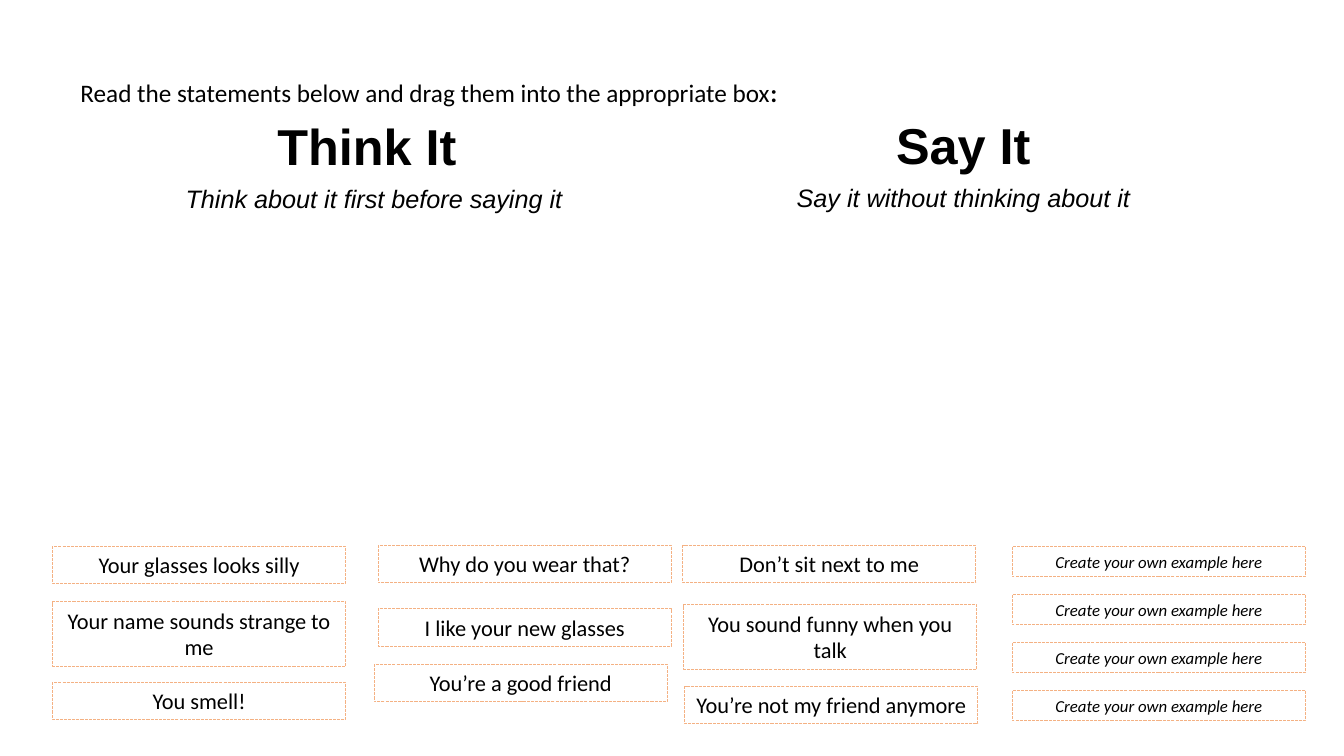
"""Build the Think It / Say It sorting slide."""
from dataclasses import dataclass

from pptx import Presentation
from pptx.dml.color import RGBColor
from pptx.enum.dml import MSO_LINE
from pptx.enum.shapes import MSO_SHAPE
from pptx.enum.text import MSO_ANCHOR, MSO_AUTO_SIZE, PP_ALIGN
from pptx.util import Inches, Pt


@dataclass(frozen=True)
class Theme:
    ink: RGBColor = RGBColor(0, 0, 0)
    border: RGBColor = RGBColor(0xF4, 0xB1, 0x83)
    heading_font: str = "Arial"
    body_font: str = "Calibri"
    heading: Pt = Pt(36)
    lead: Pt = Pt(18)
    card: Pt = Pt(16)
    prompt: Pt = Pt(12)


theme = Theme()


def add_text(para, text, size, font=theme.body_font, bold=False, italic=False,
             align=PP_ALIGN.CENTER, line_spacing=None, space_before=None):
    para.alignment = align
    para.line_spacing = line_spacing
    para.space_before = space_before
    span = para.add_run()
    span.text = text
    span.font.size = size
    span.font.name = font
    span.font.bold = bold
    span.font.italic = italic
    span.font.color.rgb = theme.ink


deck = Presentation()
deck.slide_width, deck.slide_height = Inches(13.33), Inches(7.5)
page = deck.slides.add_slide(deck.slide_layouts[6])

headings = [
    (0.89, 1.14, 5.64, "Think It ", "Think about it first before saying it"),
    (6.72, 1.13, 5.67, "Say It", "Say it without thinking about it"),
]
for left, top, width, title, subtitle in headings:
    box = page.shapes.add_textbox(Inches(left), Inches(top), Inches(width), Inches(1.03))
    frame = box.text_frame
    frame.word_wrap = True
    frame.vertical_anchor = MSO_ANCHOR.BOTTOM
    spacing = {"line_spacing": 0.8, "space_before": Pt(10)}
    add_text(frame.paragraphs[0], title, theme.heading, theme.heading_font, bold=True, **spacing)
    add_text(frame.add_paragraph(), subtitle, theme.lead, theme.heading_font, italic=True, **spacing)

instruction = page.shapes.add_textbox(Inches(0.7), Inches(0.75), Inches(11.5), Inches(0.37))
instruction.text_frame.word_wrap = True
instruction.text_frame.vertical_anchor = MSO_ANCHOR.BOTTOM
for text, bold in [("Read the statements below and drag them into the appropriate box", False), (":", True)]:
    add_text(instruction.text_frame.paragraphs[0], text, theme.lead, bold=bold,
             align=PP_ALIGN.LEFT, line_spacing=0.9)

one_line, two_lines, prompt_height = 0.37, 0.64, 0.3
statements = [
    (0.52, 5.42, one_line, "Your glasses looks silly"),
    (0.52, 5.97, two_lines, "Your name sounds strange to me"),
    (0.52, 6.77, one_line, "You smell!"),
    (3.75, 5.41, one_line, "Why do you wear that?"),
    (3.75, 6.04, one_line, "I like your new glasses"),
    (3.71, 6.59, one_line, "You’re a good friend"),
    (6.77, 5.41, one_line, "Don’t sit next to me"),
    (6.78, 6.0, two_lines, "You sound funny when you talk"),
    (6.79, 6.81, one_line, "You’re not my friend anymore"),
]
prompts = [(10.04, 5.42 + 0.477 * row, prompt_height, "Create your own example here")
           for row in range(4)]

for left, top, height, text in statements + prompts:
    card = page.shapes.add_shape(MSO_SHAPE.RECTANGLE, Inches(left), Inches(top),
                                 Inches(2.91), Inches(height))
    card.shadow.inherit = False
    card.fill.background()
    card.line.color.rgb = theme.border
    card.line.width = Pt(0.75)
    card.line.dash_style = MSO_LINE.SQUARE_DOT
    frame = card.text_frame
    frame.word_wrap = True
    frame.auto_size = MSO_AUTO_SIZE.SHAPE_TO_FIT_TEXT
    frame.vertical_anchor = MSO_ANCHOR.TOP
    is_prompt = height == prompt_height
    add_text(frame.paragraphs[0], text, theme.prompt if is_prompt else theme.card, italic=is_prompt)

deck.save("out.pptx")
